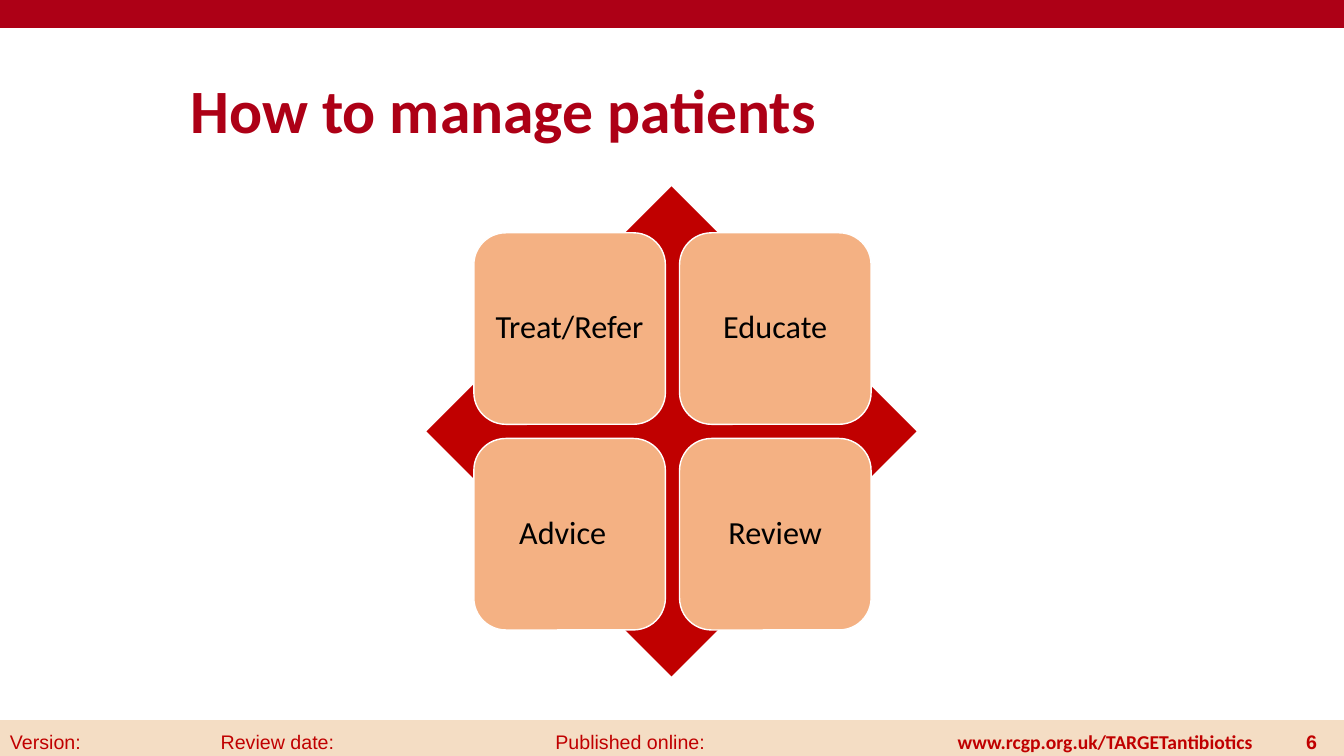
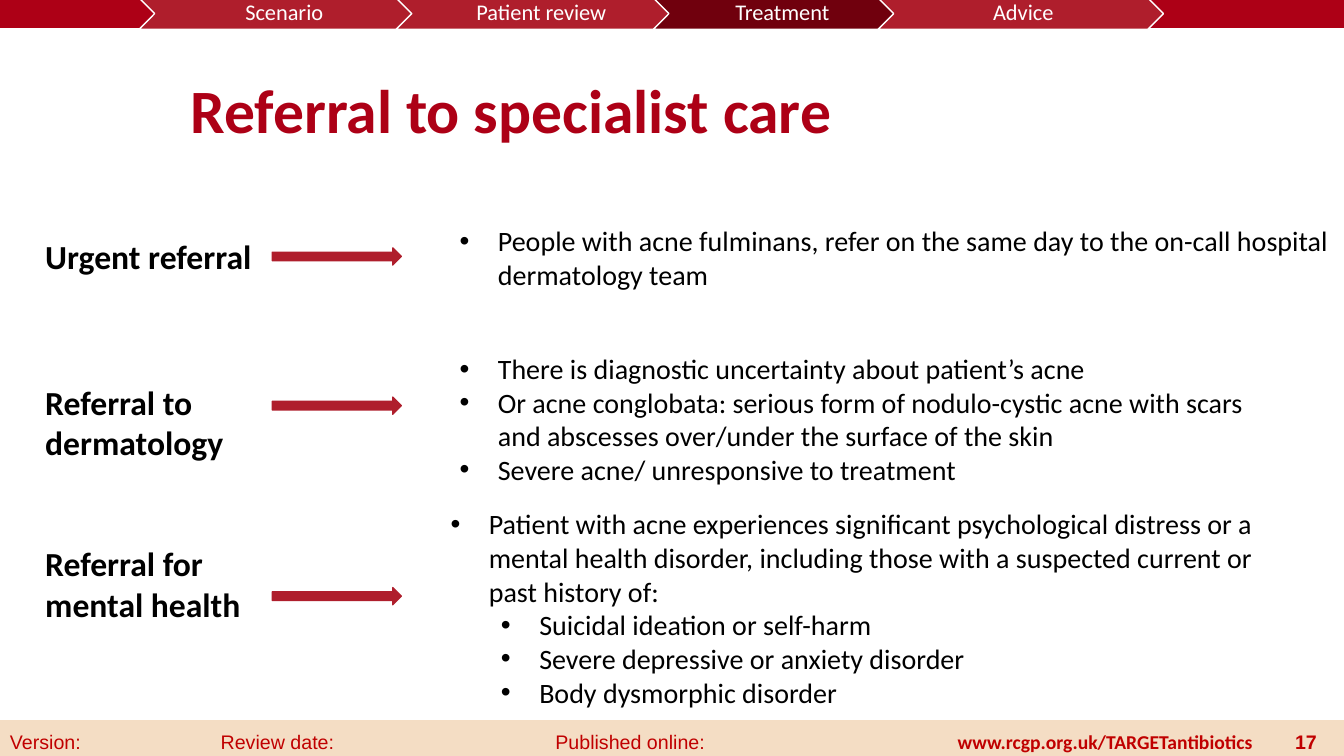
from pptx import Presentation
from pptx.dml.color import RGBColor
from pptx.enum.shapes import MSO_SHAPE
from pptx.enum.text import MSO_ANCHOR, MSO_AUTO_SIZE, PP_ALIGN
from pptx.oxml.ns import qn
from pptx.util import Inches, Pt
from lxml import etree

RECTANGLE, ROUNDED = MSO_SHAPE.RECTANGLE, MSO_SHAPE.ROUNDED_RECTANGLE
DIAMOND, CHEVRON, ARROW = MSO_SHAPE.DIAMOND, MSO_SHAPE.CHEVRON, MSO_SHAPE.RIGHT_ARROW
LEFT, CENTER, RIGHT = PP_ALIGN.LEFT, PP_ALIGN.CENTER, PP_ALIGN.RIGHT
TOP, MIDDLE = MSO_ANCHOR.TOP, MSO_ANCHOR.MIDDLE


class Theme:
    heading = RGBColor(0xAD, 0x00, 0x16)
    footer_band = RGBColor(0xF4, 0xDD, 0xC4)
    red = RGBColor(0xC0, 0x00, 0x00)
    step = RGBColor(0xAF, 0x1E, 0x2C)
    current_step = RGBColor(0x70, 0x00, 0x0D)
    tile = RGBColor(0xF4, 0xB1, 0x83)
    white = RGBColor(0xFF, 0xFF, 0xFF)
    black = RGBColor(0x00, 0x00, 0x00)
    font = "Calibri"
    footer_font = "Arial"
    title_size = 44
    label_size = 24
    tile_size = 23
    body_size = 20
    step_size = 16
    footer_size = 14


def add_block(slide, kind, left, top, width, height, fill, line=None):
    """Add a flat preset shape, with a 1 pt outline if a line colour is given."""
    shape = slide.shapes.add_shape(kind, Inches(left), Inches(top), Inches(width), Inches(height))
    shape.shadow.inherit = False
    shape.fill.solid()
    shape.fill.fore_color.rgb = fill
    if line is None:
        shape.line.fill.background()
    else:
        shape.line.color.rgb = line
        shape.line.width = Pt(1)
    return shape


def write(shape, lines, size, color, font=Theme.font, bold=False, align=LEFT,
          anchor=TOP, spacing=1.0, bullets=False):
    """Fill a shape with paragraphs given as (level, text) pairs."""
    frame = shape.text_frame
    frame.word_wrap = True
    frame.auto_size = MSO_AUTO_SIZE.NONE
    frame.vertical_anchor = anchor
    for index, (level, text) in enumerate(lines):
        paragraph = frame.add_paragraph() if index else frame.paragraphs[0]
        paragraph.text = text
        paragraph.level = level
        paragraph.alignment = align
        paragraph.line_spacing = spacing
        if bullets:
            properties = paragraph._p.get_or_add_pPr()
            properties.set("marL", str(Inches(0.38 + 0.5 * level)))
            properties.set("indent", str(Inches(-0.38)))
            etree.SubElement(properties, qn("a:buFont")).set("typeface", "Arial")
            etree.SubElement(properties, qn("a:buChar")).set("char", "•")
        paragraph.font.name = font
        paragraph.font.size = Pt(size)
        paragraph.font.bold = bold
        paragraph.font.color.rgb = color


presentation = Presentation()
presentation.slide_width = Inches(13.33)
presentation.slide_height = Inches(7.5)

# Shared frame: bands, footer and title
slides = []
for title, number in [("How to manage patients", "6"), ("Referral to specialist care", "17")]:
    slide = presentation.slides.add_slide(presentation.slide_layouts[5])
    slides.append(slide)
    add_block(slide, RECTANGLE, 0, 7.15, 13.33, 0.35, Theme.footer_band, Theme.footer_band)
    add_block(slide, RECTANGLE, 0, 0, 13.33, 0.27, Theme.heading, Theme.heading)

    for text, left, width, font, bold, align in [
        ("Version:", 0, 1.2, Theme.footer_font, False, LEFT),
        ("Review date:", 2.09, 1.66, Theme.footer_font, False, LEFT),
        ("Published online:", 5.41, 1.8, Theme.footer_font, False, LEFT),
        ("www.rcgp.org.uk/TARGETantibiotics", 9.4, 3.2, Theme.font, True, LEFT),
        (number, 12.58, 0.58, Theme.footer_font, True, RIGHT),
    ]:
        box = slide.shapes.add_textbox(Inches(left), Inches(7.19), Inches(width), Inches(0.31))
        write(box, [(0, text)], Theme.footer_size, Theme.red, font, bold, align)

    heading = slide.shapes.title
    heading.left, heading.top = Inches(1.79), Inches(0.4)
    heading.width, heading.height = Inches(10.62), Inches(1.45)
    write(heading, [(0, title)], Theme.title_size, Theme.heading, bold=True,
          anchor=MIDDLE, spacing=0.9)

manage_slide, referral_slide = slides

# Diamond with a two by two grid of tiles
add_block(manage_slide, DIAMOND, 4.23, 1.85, 4.86, 4.86, Theme.red)
tile_side, tile_pitch = 1.9, 2.04
for index, text in enumerate(["Treat/Refer", "Educate", "Advice\t", "Review"]):
    row, column = divmod(index, 2)
    tile = add_block(manage_slide, ROUNDED, 4.7 + column * tile_pitch, 2.31 + row * tile_pitch,
                     tile_side, tile_side, Theme.tile, Theme.white)
    write(tile, [(0, text)], Theme.tile_size, Theme.black, align=CENTER,
          anchor=MIDDLE, spacing=0.9)

# Progress chevrons, each overlapping the one before
step_left, step_overlap = 1.38, 0.28
for text, width, fill in [
    ("Scenario", 2.83, Theme.step),
    ("Patient review", 2.83, Theme.step),
    ("Treatment", 2.51, Theme.current_step),
    ("Advice", 2.83, Theme.step),
]:
    step = add_block(referral_slide, CHEVRON, step_left, -0.02, width, 0.31, fill, Theme.white)
    frame = step.text_frame
    frame.margin_left = Inches(0.07)
    frame.margin_right = frame.margin_top = frame.margin_bottom = Inches(0.02)
    write(step, [(0, text)], Theme.step_size, Theme.white, align=CENTER,
          anchor=MIDDLE, spacing=0.9)
    step_left += width - step_overlap

# Referral routes: label, arrow and criteria
routes = [
    ("Urgent referral", (0.35, 2.29, 2.41, 0.5), 2.46, (4.46, 2.17, 8.87, 0.77), [
        (0, "People with acne fulminans, refer on the same day to the on-call hospital "
            "dermatology team"),
    ]),
    ("Referral to dermatology", (0.35, 3.74, 2.01, 0.91), 3.94, (4.46, 3.44, 8.33, 1.45), [
        (0, "There is diagnostic uncertainty about patient’s acne"),
        (0, "Or acne conglobata: serious form of nodulo-cystic acne with scars and abscesses "
            "over/under the surface of the skin"),
        (0, "Severe acne/ unresponsive to treatment"),
    ]),
    ("Referral for mental health", (0.35, 5.34, 2.37, 0.91), 5.83, (4.37, 4.98, 8.38, 2.12), [
        (0, "Patient with acne experiences significant psychological distress or a mental health "
            "disorder, including those with a suspected current or past history of:"),
        (1, "Suicidal ideation or self-harm"),
        (1, "Severe depressive or anxiety disorder"),
        (1, "Body dysmorphic disorder"),
    ]),
]
for label, label_area, arrow_top, criteria_area, criteria in routes:
    label_box = referral_slide.shapes.add_textbox(*map(Inches, label_area))
    write(label_box, [(0, label)], Theme.label_size, Theme.black, bold=True)
    add_block(referral_slide, ARROW, 2.7, arrow_top, 1.28, 0.17, Theme.step, Theme.step)
    criteria_box = referral_slide.shapes.add_textbox(*map(Inches, criteria_area))
    write(criteria_box, criteria, Theme.body_size, Theme.black, bullets=True)

presentation.save("out.pptx")
